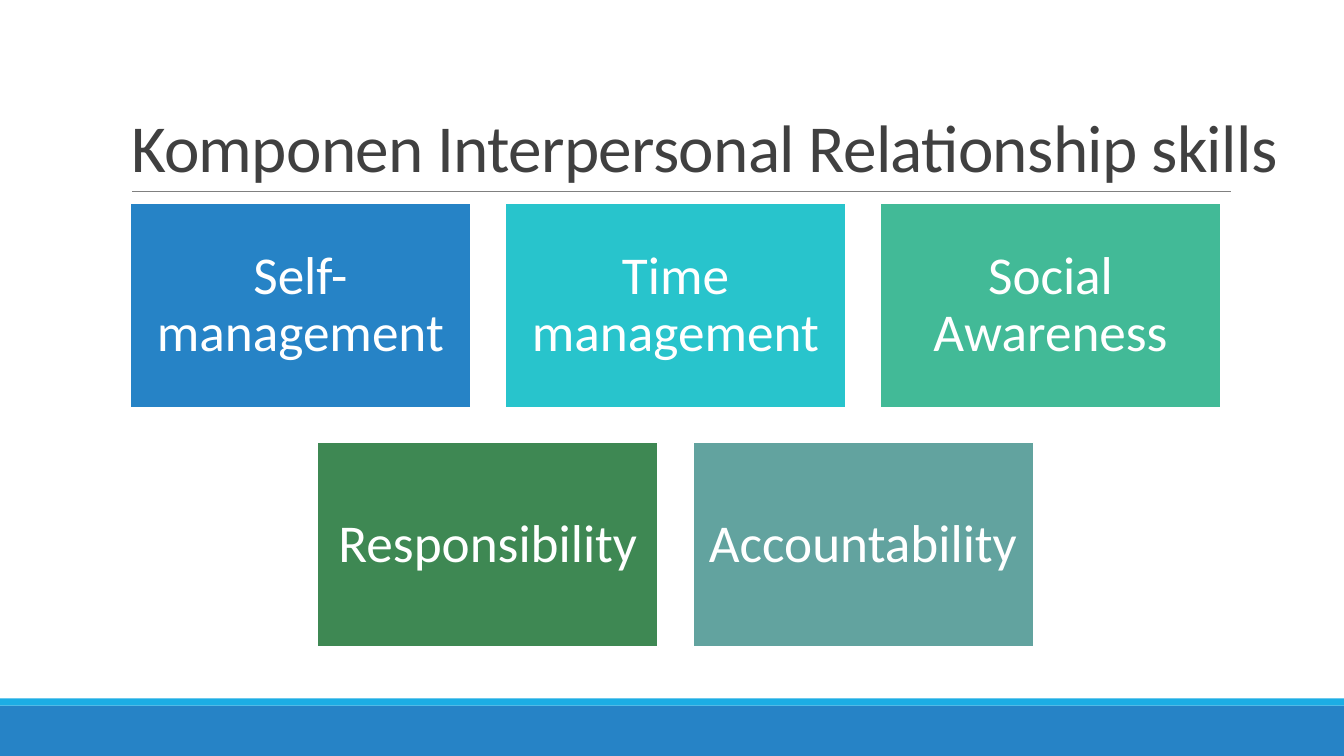
from dataclasses import dataclass

from lxml import etree
from pptx import Presentation
from pptx.dml.color import RGBColor
from pptx.enum.shapes import MSO_CONNECTOR, MSO_SHAPE
from pptx.enum.text import MSO_ANCHOR, MSO_AUTO_SIZE, PP_ALIGN
from pptx.oxml.ns import qn
from pptx.util import Inches, Pt

RECT = MSO_SHAPE.RECTANGLE
STRAIGHT = MSO_CONNECTOR.STRAIGHT
MIDDLE, BOTTOM = MSO_ANCHOR.MIDDLE, MSO_ANCHOR.BOTTOM
LEFT, CENTER = PP_ALIGN.LEFT, PP_ALIGN.CENTER
NO_AUTOFIT = MSO_AUTO_SIZE.NONE

FONT = "Calibri"
SLIDE_W, SLIDE_H = 13.33, 7.5
CARD_W, CARD_H, GAP = 3.38, 2.03, 0.34
GRID_CENTER, GRID_TOP = 6.7, 2.02
CARD_INSET = 0.16


@dataclass
class Card:
    label: str
    fill: str


@dataclass
class Band:
    top: float
    height: float
    fill: str


CARD_ROWS = [
    [
        Card("Self-management", "2683C6"),
        Card("Time management", "28C4CC"),
        Card("Social Awareness", "42BA97"),
    ],
    [
        Card("Responsibility", "3E8853"),
        Card("Accountability", "62A39F"),
    ],
]
FOOTER_BANDS = [Band(7, 0.5, "2683C6"), Band(6.93, 0.07, "1CADE4")]


def rgb(color: str) -> RGBColor:
    return RGBColor.from_string(color)


def add_rect(slide, left: float, top: float, width: float, height: float, fill: str):
    s = slide.shapes.add_shape(
        RECT, Inches(left), Inches(top), Inches(width), Inches(height)
    )
    s.shadow.inherit = False
    s.fill.solid()
    s.fill.fore_color.rgb = rgb(fill)
    s.line.fill.background()
    return s


def write_text(tf, text: str, size: float, color: str, align, spacing: float):
    """Fill the first paragraph with one styled run and return the run."""
    tf.word_wrap = True
    tf.auto_size = NO_AUTOFIT
    p = tf.paragraphs[0]
    p.alignment = align
    p.line_spacing = spacing
    r = p.add_run()
    r.text = text
    r.font.name = FONT
    r.font.size = Pt(size)
    r.font.color.rgb = rgb(color)
    return r


def add_title_rule(slide) -> None:
    rule = slide.shapes.add_connector(
        STRAIGHT, Inches(1.31), Inches(1.9), Inches(12.21), Inches(1.9)
    )
    rule.line.color.rgb = rgb("808080")
    rule.line.width = Pt(0.5)
    etree.SubElement(rule._element.spPr, qn("a:effectLst"))


def set_title(slide, text: str) -> None:
    title = slide.shapes.title
    title.left, title.top = Inches(1.2), Inches(0.31)
    title.width, title.height = Inches(11.63), Inches(1.59)
    tf = title.text_frame
    tf.vertical_anchor = BOTTOM
    r = write_text(tf, text, 48, "404040", LEFT, 0.85)
    r.font._element.set("spc", "-50")


def add_card(slide, card: Card, left: float, top: float) -> None:
    s = add_rect(slide, left, top, CARD_W, CARD_H, card.fill)
    s.line.color.rgb = rgb("FFFFFF")
    s.line.width = Pt(1.25)
    tf = s.text_frame
    tf.vertical_anchor = MIDDLE
    tf.margin_left = tf.margin_right = Inches(CARD_INSET)
    tf.margin_top = tf.margin_bottom = Inches(CARD_INSET)
    write_text(tf, card.label, 38, "FFFFFF", CENTER, 0.9)


def add_card_grid(slide) -> None:
    """Draw the card rows, each centred on the same axis."""
    for row, cards in enumerate(CARD_ROWS):
        row_width = len(cards) * (CARD_W + GAP) - GAP
        left = GRID_CENTER - row_width / 2
        top = GRID_TOP + row * (CARD_H + GAP)
        for col, card in enumerate(cards):
            add_card(slide, card, left + col * (CARD_W + GAP), top)


def main() -> None:
    prs = Presentation()
    prs.slide_width, prs.slide_height = Inches(SLIDE_W), Inches(SLIDE_H)
    slide = prs.slides.add_slide(prs.slide_layouts.get_by_name("Title Only"))
    for band in FOOTER_BANDS:
        add_rect(slide, 0, band.top, SLIDE_W, band.height, band.fill)
    add_title_rule(slide)
    set_title(slide, "Komponen Interpersonal Relationship skills")
    add_card_grid(slide)
    prs.save("out.pptx")


if __name__ == "__main__":
    main()
